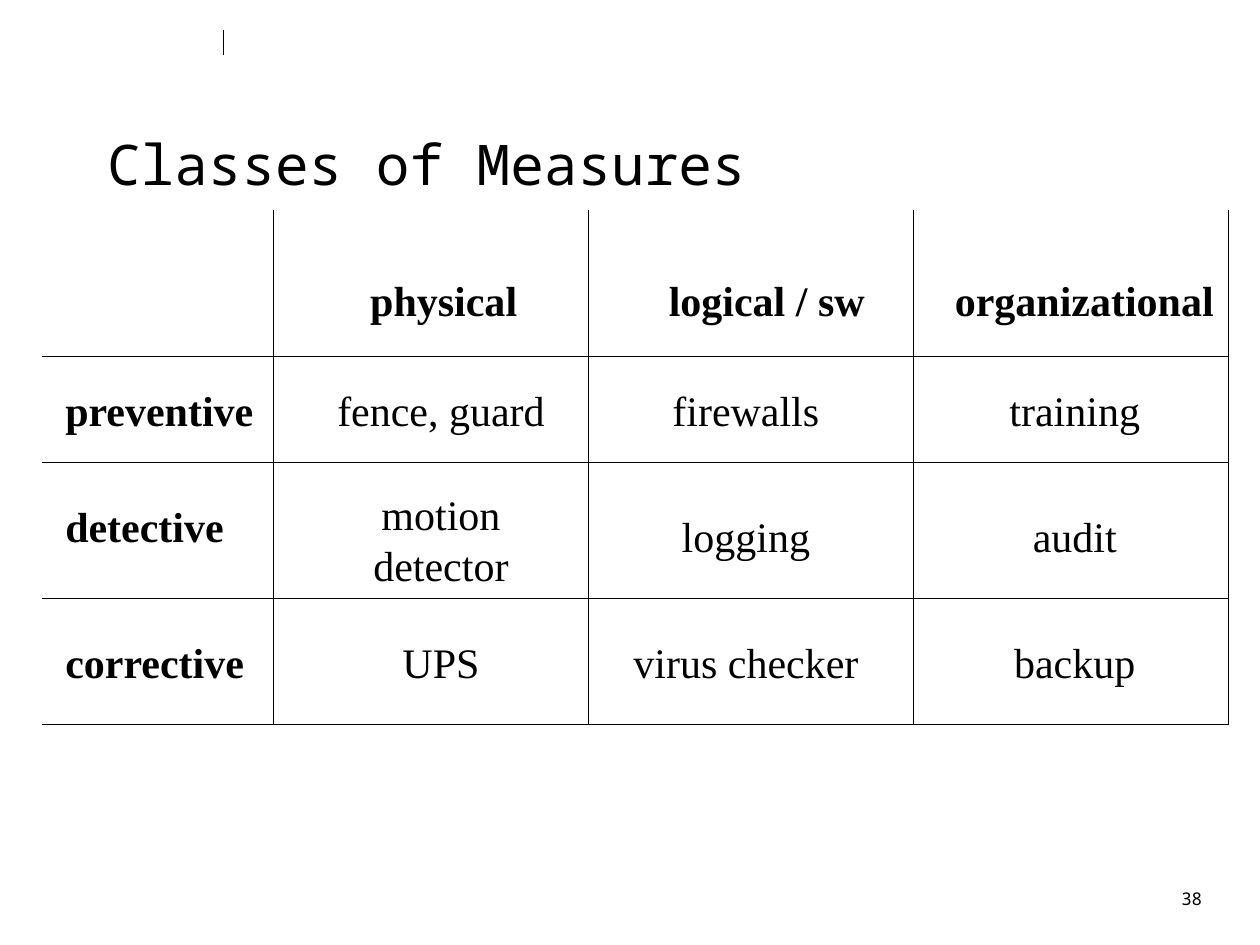
from dataclasses import dataclass

from lxml import etree
from pptx import Presentation
from pptx.dml.color import RGBColor
from pptx.enum import shapes, text
from pptx.oxml import ns
from pptx.util import Inches, Pt


@dataclass(frozen=True)
class Theme:
    ink: RGBColor = RGBColor(0, 0, 0)
    title_font: str = "Noto Sans Mono"
    table_font: str = "Times New Roman"
    title_size: int = 32
    table_size: int = 24
    number_size: int = 10


theme = Theme()
deck = Presentation()
deck.slide_width, deck.slide_height = Inches(10), Inches(7.5)
page = deck.slides.add_slide(deck.slide_layouts[5])


def add_rule(x1, y1, x2, y2, weight=0.75):
    rule = page.shapes.add_connector(
        shapes.MSO_CONNECTOR.STRAIGHT, Inches(x1), Inches(y1), Inches(x2), Inches(y2))
    rule.line.color.rgb = theme.ink
    rule.line.width = Pt(weight)
    etree.SubElement(rule._element.spPr, ns.qn("a:effectLst"))


def add_entry(words, left, top, width, height=0.5, bold=False, align=text.PP_ALIGN.LEFT,
              font=theme.table_font, size=theme.table_size, wrap=False):
    """Add a text box with one paragraph for each line of words."""
    box = page.shapes.add_textbox(Inches(left), Inches(top), Inches(width), Inches(height))
    frame = box.text_frame
    frame.text = words
    frame.word_wrap = wrap
    if not wrap:
        frame.auto_size = text.MSO_AUTO_SIZE.SHAPE_TO_FIT_TEXT
    for para in frame.paragraphs:
        para.alignment = align
        para.font.name, para.font.size, para.font.bold = font, Pt(size), bold
        para.font.color.rgb = theme.ink


# Title, header mark and page number
title = page.shapes.title
title.left, title.top, title.width, title.height = (
    Inches(0.75), Inches(0.67), Inches(8.5), Inches(1.25))
title.text_frame.text = "Classes of Measures"
title.text_frame.vertical_anchor = text.MSO_ANCHOR.MIDDLE
heading = title.text_frame.paragraphs[0]
heading.alignment = text.PP_ALIGN.LEFT
heading.font.name, heading.font.size = theme.title_font, Pt(theme.title_size)
heading.font.color.rgb = theme.ink

add_rule(1.77, 0.24, 1.77, 0.44, weight=0.5)
add_entry("38", 7.56, 7, 2.08, 0.33, align=text.PP_ALIGN.RIGHT,
          font=theme.title_font, size=theme.number_size, wrap=True)

# Grid
grid_left, grid_top, grid_right, grid_bottom = 0.33, 1.67, 9.75, 5.75
for y in (2.83, 3.67, 4.75, grid_bottom):
    add_rule(grid_left, y, grid_right, y)
for x in (2.17, 4.67, 7.25, grid_right):
    add_rule(x, grid_top, x, grid_bottom)

# Column and row headings
for words, left, width in (("physical", 2.84, 1.37), ("logical / sw", 5.21, 1.76),
                           ("organizational", 7.48, 2.26)):
    add_entry(words, left, 2.13, width, bold=True)
for words, top, width in (("preventive", 3, 1.7), ("detective", 3.92, 1.46),
                          ("corrective", 5, 1.62)):
    add_entry(words, 0.42, top, width, bold=True)

# Measures, centred in their columns: (words, box width)
centres = (3.5, 5.92, 8.53)
measures = {
    3: (("fence, guard", 1.85), ("firewalls", 1.37), ("training", 1.24)),
    4: (("motion\ndetector", 1.27), ("logging", 1.22), ("audit", 0.87)),
    5: (("UPS", 0.81), ("virus checker", 1.99), ("backup", 1.16)),
}
for row_top, row in measures.items():
    for centre, (words, width) in zip(centres, row):
        two_lines = "\n" in words
        add_entry(words, centre - width / 2, row_top - 0.17 * two_lines, width,
                  0.9 if two_lines else 0.5, align=text.PP_ALIGN.CENTER)

deck.save("out.pptx")
